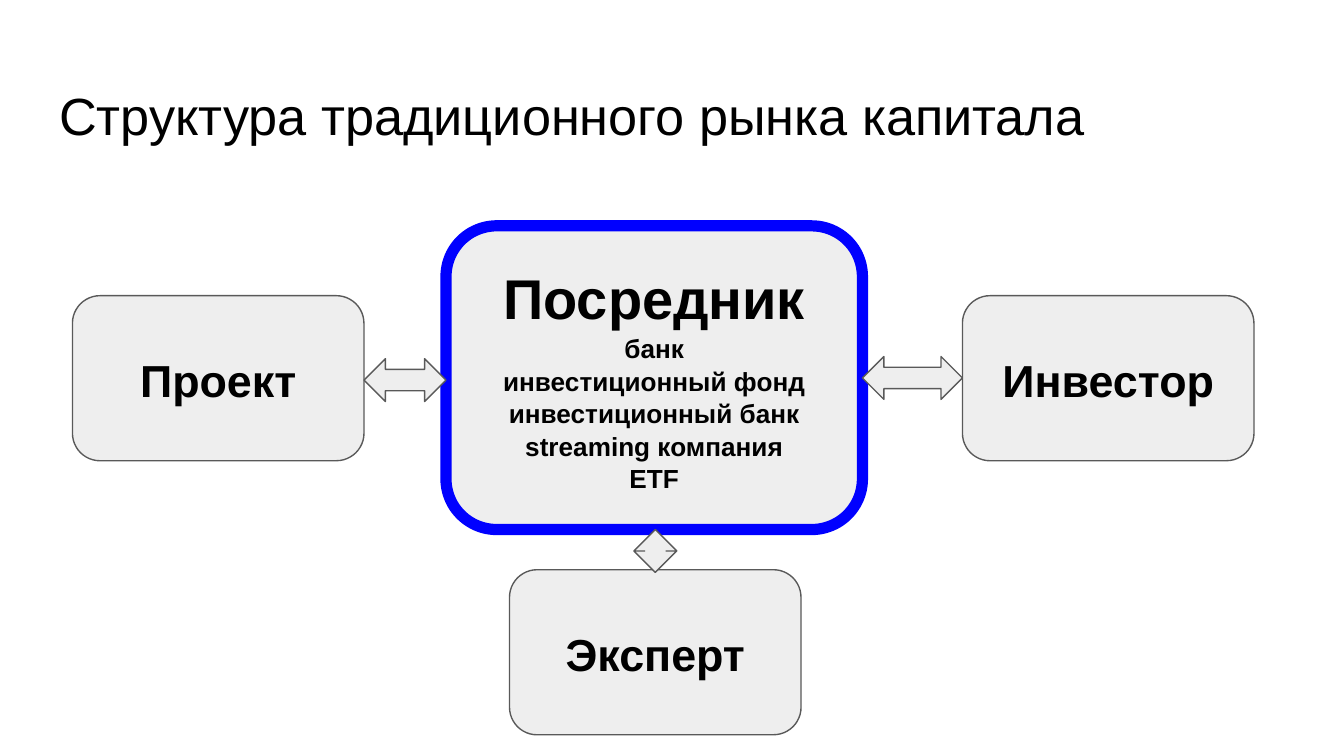
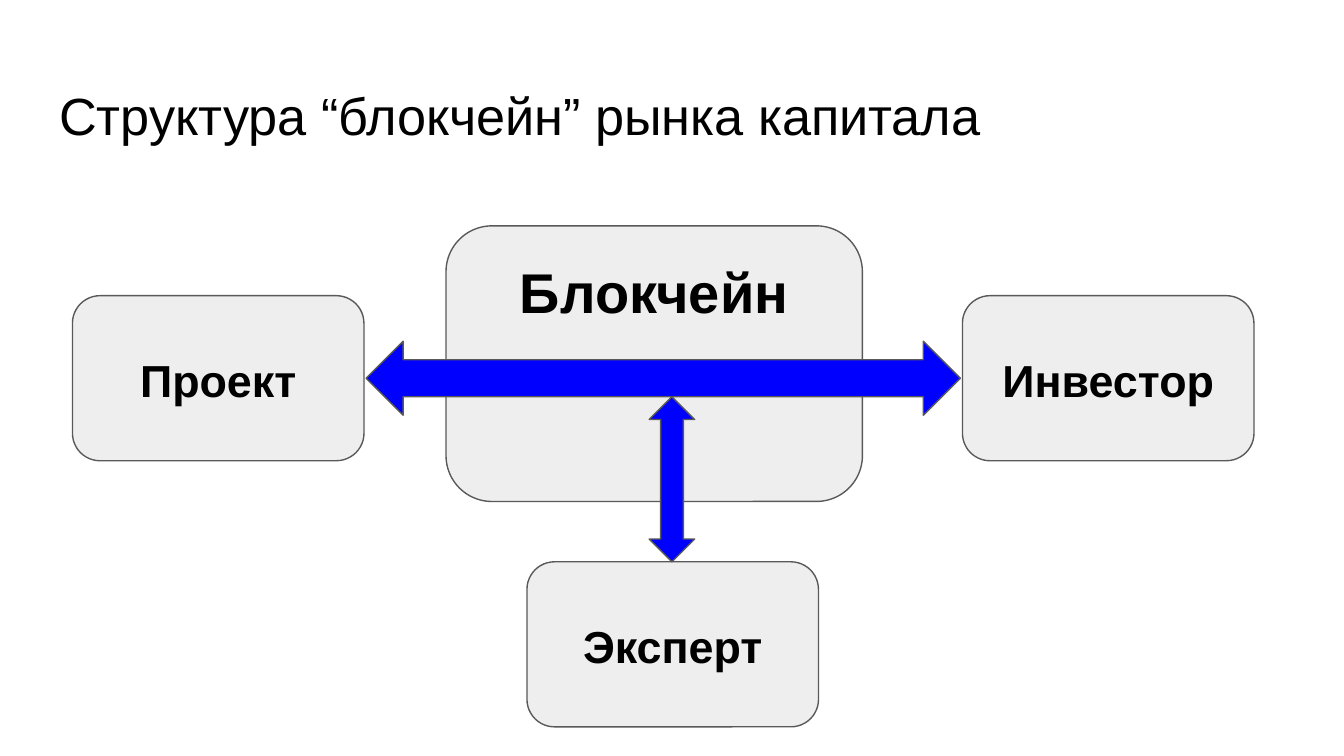
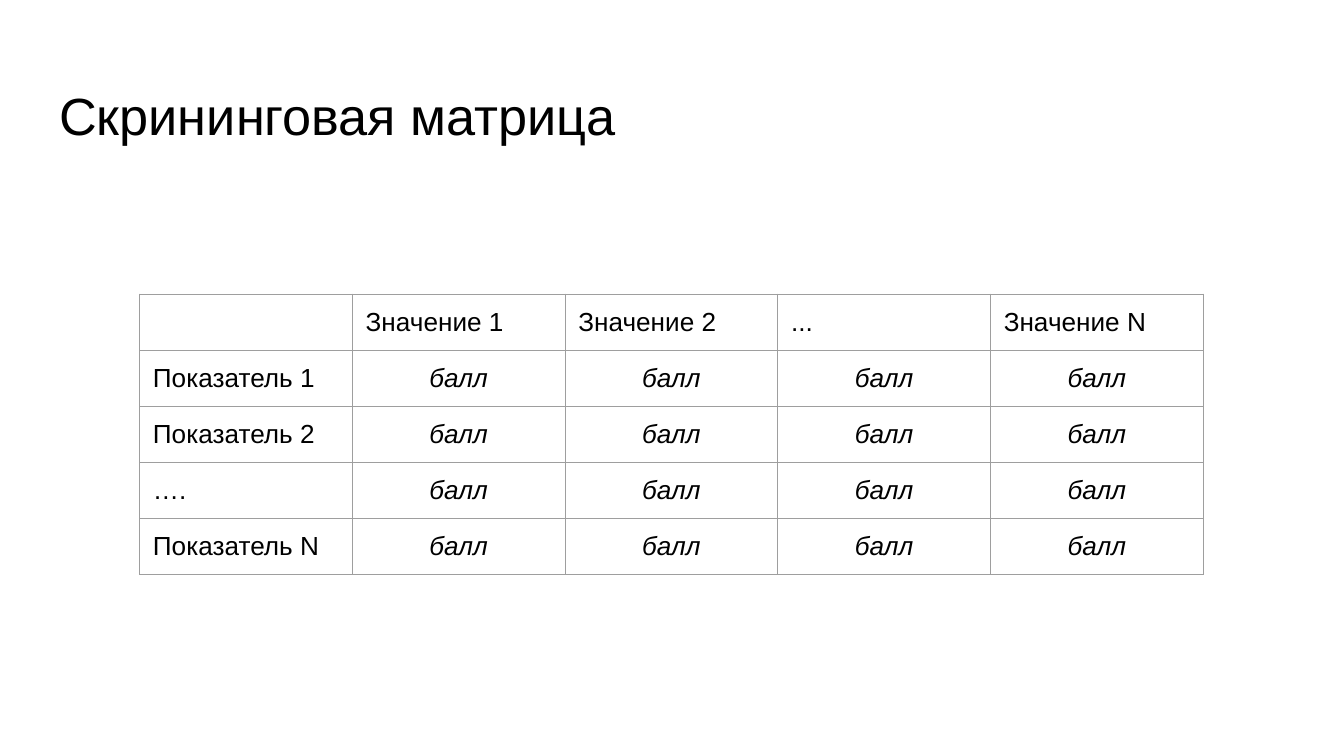
from lxml.etree import SubElement
from pptx import Presentation
from pptx.dml.color import RGBColor
from pptx.enum.shapes import MSO_SHAPE as SHAPE
from pptx.enum.text import MSO_ANCHOR as ANCHOR, MSO_AUTO_SIZE as AUTO, PP_ALIGN as ALIGN
from pptx.oxml.ns import qn
from pptx.util import Cm, Pt

BLACK = RGBColor(0x00, 0x00, 0x00)
GREY = RGBColor(0xEE, 0xEE, 0xEE)
OUTLINE = RGBColor(0x59, 0x59, 0x59)
BLUE = RGBColor(0x00, 0x00, 0xFF)
GRID = RGBColor(0x9E, 0x9E, 0x9E)
FONT = "Arial"
INSET = Cm(0.25)
DIAGRAM = (1.37, 4.27, 22.33)
NODE_W, NODE_H = 5.51, 3.12
HUB_X, HUB_W = 7.06, 7.87
MATRIX = (2.64, 5.56, 20.1, 5.3)


def style(p, size, align=ALIGN.LEFT, bold=False, italic=False):
    """Format a paragraph and its runs."""
    p.alignment = align
    for r in p.runs:
        f = r.font
        f.name, f.size, f.bold, f.italic = FONT, Pt(size), bold, italic
        f.color.rgb = BLACK


def add_slide(prs, title):
    """Add a slide with the shared title style."""
    slide = prs.slides.add_slide(prs.slide_layouts[5])
    sp = slide.shapes.title
    sp.left, sp.top, sp.width, sp.height = Cm(0.87), Cm(1.24), Cm(23.67), Cm(1.6)
    tf = sp.text_frame
    tf.text = title
    tf.auto_size = AUTO.NONE
    tf.vertical_anchor = ANCHOR.TOP
    tf.margin_left = tf.margin_right = INSET
    tf.margin_top, tf.margin_bottom = Cm(0.34), 0
    style(tf.paragraphs[0], 28)
    return slide


def add_figure(slide, kind, box, fill=GREY, line=OUTLINE, weight=0.75):
    """Draw a preset shape in a box given in centimetres."""
    sp = slide.shapes.add_shape(kind, *map(Cm, box))
    sp.shadow.inherit = False
    sp.fill.solid()
    sp.fill.fore_color.rgb = fill
    sp.line.color.rgb = line
    sp.line.width = Pt(weight)
    return sp


def add_node(slide, box, lines, size=24, **look):
    """Draw a rounded box with a bold heading and smaller lines under it."""
    sp = add_figure(slide, SHAPE.ROUNDED_RECTANGLE, box, **look)
    tf = sp.text_frame
    tf.word_wrap = True
    tf.vertical_anchor = ANCHOR.MIDDLE
    tf.margin_left = tf.margin_right = tf.margin_top = tf.margin_bottom = INSET
    tf.text = "\n".join(lines)
    for i, p in enumerate(tf.paragraphs):
        style(p, 14 if i else size, ALIGN.CENTER, bold=True)
        p.line_spacing = 1.04
    return sp


def add_arrow(slide, box, kind=SHAPE.LEFT_RIGHT_ARROW, fill=GREY):
    """Draw a double arrow with half-height heads."""
    sp = add_figure(slide, kind, box, fill)
    sp.adjustments[0] = sp.adjustments[1] = 0.5
    return sp


def add_market(slide, box, hub_lines, hub_height, expert_at, **hub_look):
    """Place project, investor, hub and expert nodes and return the hub."""
    x, y, w = box
    for left, name in ((x, "Проект"), (x + w - NODE_W, "Инвестор")):
        add_node(slide, (left, y + 1.32, NODE_W, NODE_H), [name])
    hub = add_node(slide, (x + HUB_X, y, HUB_W, hub_height), hub_lines, 30, **hub_look)
    dx, dy = expert_at
    add_node(slide, (x + dx, y + dy, NODE_W, NODE_H), ["Эксперт"])
    return hub


def traditional_market(slide, box):
    """Draw the market in which an intermediary links all parties."""
    x, y, w = box
    lines = ["Посредник", "банк", "инвестиционный фонд", "инвестиционный банк",
             "streaming компания", "ETF"]
    add_market(slide, box, lines, 5.74, (8.26, 6.5), line=BLUE, weight=6)
    hub_right = HUB_X + HUB_W
    add_arrow(slide, (x + NODE_W, y + 2.51, HUB_X - NODE_W, 0.81))
    add_arrow(slide, (x + hub_right, y + 2.47, w - NODE_W - hub_right, 0.81))
    add_arrow(slide, (x + 10.61, y + 5.74, 0.81, 0.81)).rotation = 90


def blockchain_market(slide, box):
    """Draw the market in which the parties meet through the blockchain."""
    x, y, w = box
    hub = add_market(slide, box, ["Блокчейн"], 5.21, (8.59, 6.35))
    hub.text_frame.vertical_anchor = ANCHOR.TOP
    hub.text_frame.margin_top = Cm(0.3)
    add_arrow(slide, (x + NODE_W + 0.04, y + 2.18, w - 2 * NODE_W - 0.08, 1.4), fill=BLUE)
    add_arrow(slide, (x + 10.9, y + 3.23, 0.86, 3.12), SHAPE.UP_DOWN_ARROW, BLUE)


def set_borders(cell):
    """Draw a thin grey line on each side of a cell."""
    tc_pr = cell._tc.get_or_add_tcPr()
    for i, side in enumerate(("a:lnL", "a:lnR", "a:lnT", "a:lnB")):
        ln = tc_pr.makeelement(qn(side), {"w": str(Pt(0.75))})
        tc_pr.insert(i, ln)
        fill = SubElement(ln, qn("a:solidFill"))
        SubElement(fill, qn("a:srgbClr"), val=str(GRID))


def screening_matrix(slide, box):
    """Fill a table of indicators against values with scores."""
    values = ["Значение 1", "Значение 2", "...", "Значение N"]
    indicators = ["Показатель 1", "Показатель 2", "….", "Показатель N"]
    rows = [[""] + values] + [[name] + ["балл"] * len(values) for name in indicators]
    table = slide.shapes.add_table(len(rows), len(rows[0]), *map(Cm, box)).table
    table.first_row = table.horz_banding = False
    for i, row in enumerate(rows):
        for j, text in enumerate(row):
            cell = table.cell(i, j)
            cell.fill.background()
            set_borders(cell)
            if text:
                score = i > 0 and j > 0
                cell.text = text
                cell.margin_left = cell.margin_right = INSET
                cell.margin_top = cell.margin_bottom = INSET
                style(cell.text_frame.paragraphs[0], 14,
                      ALIGN.CENTER if score else ALIGN.LEFT, italic=score)


def main():
    """Build the three slides and save them."""
    prs = Presentation()
    prs.slide_width, prs.slide_height = Cm(25.4), Cm(14.29)
    for title, draw, box in (
        ("Структура традиционного рынка капитала", traditional_market, DIAGRAM),
        ("Структура “блокчейн” рынка капитала", blockchain_market, DIAGRAM),
        ("Скрининговая матрица", screening_matrix, MATRIX),
    ):
        draw(add_slide(prs, title), box)
    prs.save("out.pptx")


if __name__ == "__main__":
    main()
